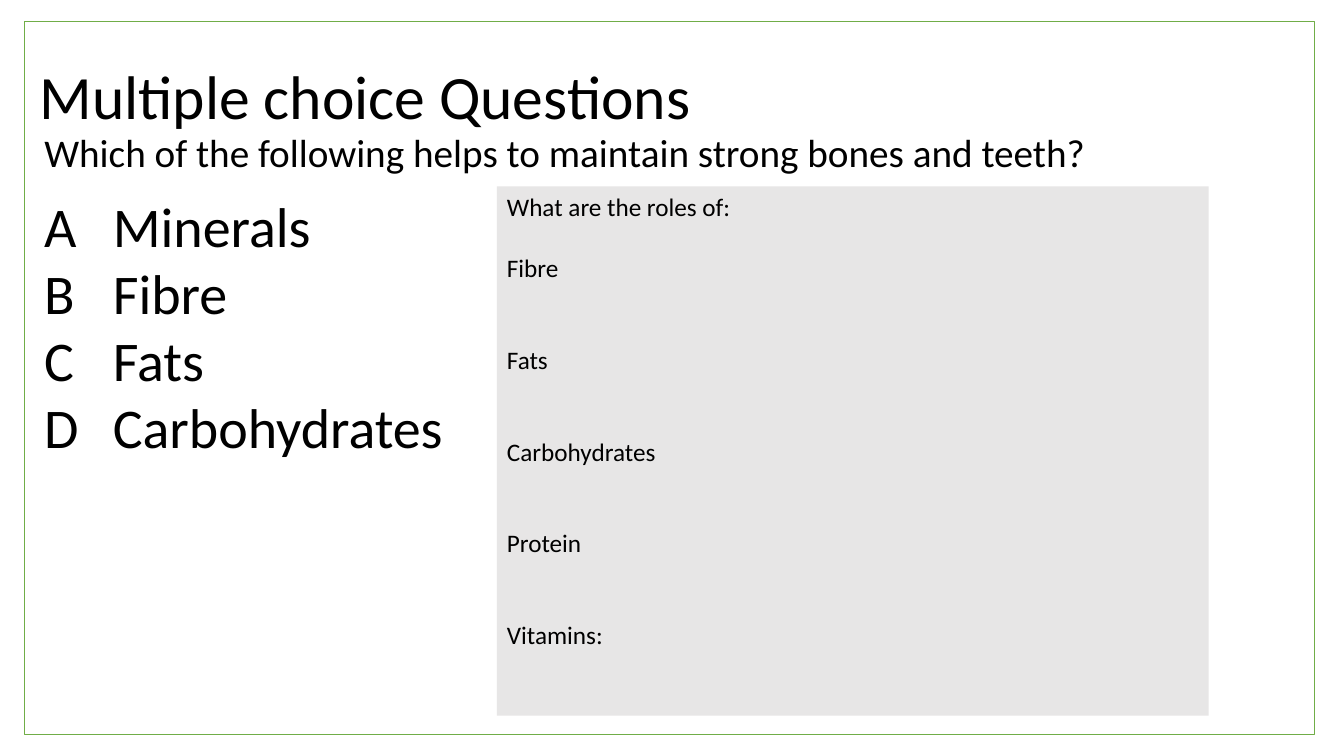
from dataclasses import dataclass

from pptx import Presentation
from pptx.dml.color import RGBColor
from pptx.enum.shapes import MSO_SHAPE
from pptx.enum.text import MSO_ANCHOR, MSO_AUTO_SIZE, PP_ALIGN
from pptx.oxml.xmlchemy import OxmlElement
from pptx.util import Pt


@dataclass(frozen=True)
class Theme:
    font: str = "Calibri"
    text: RGBColor = RGBColor(0x00, 0x00, 0x00)
    panel: RGBColor = RGBColor(0xE7, 0xE6, 0xE6)
    border: RGBColor = RGBColor(0x70, 0xAD, 0x47)
    title_size: float = 44
    question_size: float = 28
    option_size: float = 40
    role_size: float = 18


class QuizSlide:
    def __init__(self, slide, theme):
        self.slide = slide
        self.theme = theme

    def prepare(self, shape, anchor=MSO_ANCHOR.TOP):
        frame = shape.text_frame
        frame.word_wrap = True
        frame.auto_size = MSO_AUTO_SIZE.NONE
        frame.vertical_anchor = anchor
        return frame

    def add_text(self, paragraph, text, size, line=1.0, before=0, hang=0):
        paragraph.alignment = PP_ALIGN.LEFT
        paragraph.line_spacing = line
        paragraph.space_before = Pt(before)
        properties = paragraph._p.get_or_add_pPr()
        properties.set("marL", str(Pt(hang)))
        properties.set("indent", str(-Pt(hang)))
        properties.append(OxmlElement("a:buNone"))
        run = paragraph.add_run()
        run.text = text
        run.font.name = self.theme.font
        run.font.size = Pt(size)
        run.font.color.rgb = self.theme.text

    def add_lines(self, frame, lines, size, gaps, hang=0):
        for number, (line, gap) in enumerate(zip(lines, gaps)):
            paragraph = frame.add_paragraph() if number else frame.paragraphs[0]
            self.add_text(paragraph, line, size, before=gap, hang=hang)

    def placeholder(self, index, text, box, size, anchor=MSO_ANCHOR.TOP, before=0):
        holder = self.slide.placeholders[index]
        holder.left, holder.top, holder.width, holder.height = map(Pt, box)
        frame = self.prepare(holder, anchor)
        self.add_text(frame.paragraphs[0], text, size, line=0.9, before=before)

    def options(self, choices, box, hang):
        frame = self.prepare(self.slide.shapes.add_textbox(*map(Pt, box)))
        lines = [f"{letter}\t{choice}" for letter, choice in choices]
        self.add_lines(frame, lines, self.theme.option_size, [0] * len(lines), hang)

    def rectangle(self, box, fill=None, line=None):
        rectangle = self.slide.shapes.add_shape(MSO_SHAPE.RECTANGLE, *map(Pt, box))
        rectangle.shadow.inherit = False
        if fill is None:
            rectangle.fill.background()
        else:
            rectangle.fill.solid()
            rectangle.fill.fore_color.rgb = fill
        if line is None:
            rectangle.line.fill.background()
        else:
            rectangle.line.color.rgb = line
            rectangle.line.width = Pt(0.75)
        return rectangle

    def roles(self, heading, nutrients, box):
        frame = self.prepare(self.rectangle(box, fill=self.theme.panel))
        size = self.theme.role_size
        blank = size * 1.22  # height of one line
        gaps = [0, blank] + [2 * blank] * (len(nutrients) - 1)
        self.add_lines(frame, [heading, *nutrients], size, gaps)


def main():
    deck = Presentation()
    deck.slide_width, deck.slide_height = Pt(960), Pt(540)
    theme = Theme()
    quiz = QuizSlide(deck.slides.add_slide(deck.slide_layouts[1]), theme)

    # Title and question
    quiz.placeholder(0, "Multiple choice Questions", (21, 18.7, 828, 104.4),
                     theme.title_size, MSO_ANCHOR.MIDDLE)
    quiz.placeholder(1, "Which of the following helps to maintain strong bones and teeth?",
                     (24.5, 91.5, 828, 41), theme.question_size, before=10)

    # Answer options
    choices = zip("ABCD", ["Minerals", "Fibre", "Fats", "Carbohydrates"])
    quiz.options(choices, (24.5, 133.2, 322.5, 201), hang=49)

    # Panel for the roles of each nutrient
    quiz.roles("What are the roles of:",
               ["Fibre", "Fats", "Carbohydrates", "Protein", "Vitamins:"],
               (355, 133.2, 508.3, 378))

    # Slide border
    quiz.rectangle((17.3, 15.1, 921.6, 509.8), line=theme.border)

    deck.save("out.pptx")


if __name__ == "__main__":
    main()
